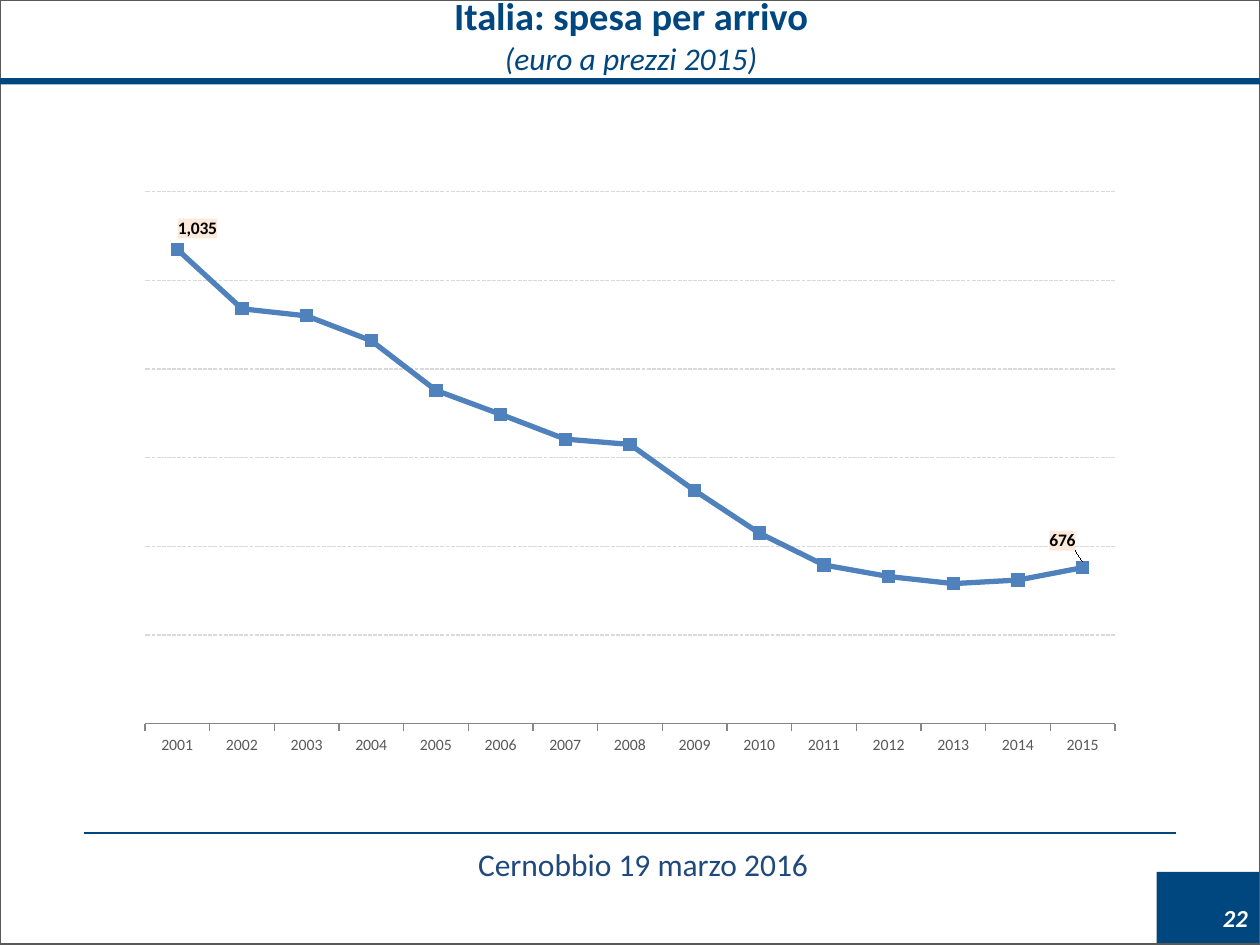
"""Build the slide on Italian spending per arrival, 2001 to 2015."""
from lxml import etree
from pptx import Presentation, util as u
from pptx.chart import data
from pptx.dml.color import RGBColor
from pptx.enum import chart as ch, dml, shapes, text as t
from pptx.oxml import ns, parse_xml

NAVY = RGBColor(0x00, 0x46, 0x7F)
INK = RGBColor(0x1F, 0x49, 0x7D)
BLUE = RGBColor(0x4F, 0x81, 0xBD)
PEACH = RGBColor(0xFD, 0xE9, 0xD9)
GREY = RGBColor(0x59, 0x59, 0x59)
PALE = RGBColor(0xD9, 0xD9, 0xD9)
AXIS = RGBColor(0x86, 0x86, 0x86)
WHITE = RGBColor(0xFF, 0xFF, 0xFF)
BLACK = RGBColor(0, 0, 0)
FONT = "Calibri"

deck = Presentation()
deck.slide_width, deck.slide_height = u.Inches(10), u.Inches(7.5)
slide = deck.slides.add_slide(deck.slide_layouts[6])


def block(x, y, w, h, fill=None, line=None):
    box = slide.shapes.add_shape(shapes.MSO_SHAPE.RECTANGLE, *map(u.Inches, (x, y, w, h)))
    box.shadow.inherit = False
    if fill is None:
        box.fill.background()
    else:
        box.fill.solid()
        box.fill.fore_color.rgb = fill
    if line is None:
        box.line.fill.background()
    else:
        box.line.color.rgb = line
        box.line.width = u.Pt(1)


def write(text, frame, first=True, size=18, color=NAVY, bold=False, italic=False):
    para = frame.paragraphs[0] if first else frame.add_paragraph()
    para.alignment = t.PP_ALIGN.CENTER
    run = para.add_run()
    run.text = text
    font = run.font
    font.name, font.size, font.bold, font.italic = FONT, u.Pt(size), bold, italic
    font.color.rgb = color


block(9.18, 6.92, 0.82, 0.58, fill=NAVY)
block(0, 0, 10, 7.49, line=GREY)
block(0, 0.62, 10, 0.05, fill=NAVY)

rule = slide.shapes.add_connector(
    shapes.MSO_CONNECTOR.STRAIGHT, *map(u.Inches, (0.67, 6.61, 9.33, 6.61)))
rule.line.color.rgb = NAVY
rule.line.width = u.Pt(1.5)
etree.SubElement(rule._element.spPr, ns.qn("a:effectLst"))

frames = []
for spot in ((0.51, -0.11, 9, 0.71), (1.59, 6.66, 7.03, 0.46), (9.33, 7.12, 0.95, 0.39)):
    frame = slide.shapes.add_textbox(*map(u.Inches, spot)).text_frame
    frame.word_wrap = True
    frames.append(frame)
title, foot, page = frames
write("Italia: spesa per arrivo", title, size=22, bold=True)
write("(euro a prezzi 2015)", title, first=False, italic=True)
write("Cernobbio 19 marzo 2016", foot, color=INK)
write("22", page, size=14, color=WHITE, bold=True, italic=True)

spend = data.CategoryChartData(number_format="#,##0")
spend.categories = [str(year) for year in range(2001, 2016)]
spend.add_series("Spesa per arrivo", (
    1035, 968, 960, 932, 876, 849, 821, 815, 763, 715, 679, 666, 658, 662, 676))
chart = slide.shapes.add_chart(
    ch.XL_CHART_TYPE.LINE_MARKERS, *map(u.Inches, (0.99, 1.43, 8.02, 4.64)), spend).chart
chart.has_legend = chart.has_title = False
chart.font.name, chart.font.size = FONT, u.Pt(10)
chart.font.color.rgb = BLACK
plot = chart.plots[0]
plot.vary_by_categories = False

LAYOUT = '<c:layout %s><c:manualLayout>%s</c:manualLayout></c:layout>'
inner = '<c:layoutTarget val="inner"/><c:xMode val="edge"/><c:yMode val="edge"/>'
inner += '<c:x val="0.02"/><c:y val="0.02"/><c:w val="0.96"/><c:h val="0.91"/>'
area = chart._chartSpace.chart.plotArea
for old in area.findall(ns.qn("c:layout")):
    area.remove(old)
area.insert(0, parse_xml(LAYOUT % (ns.nsdecls("c"), inner)))

years = chart.category_axis
years.major_tick_mark = ch.XL_TICK_MARK.OUTSIDE
years.tick_labels.font.size = u.Pt(9)
years.tick_labels.font.color.rgb = GREY
years.format.line.color.rgb = AXIS
years.format.line.width = u.Pt(0.75)

euro = chart.value_axis
euro.visible = False
euro.minimum_scale, euro.maximum_scale, euro.major_unit = 500, 1100, 100
euro.has_major_gridlines = True
grid = euro.major_gridlines.format.line
grid.color.rgb = PALE
grid.width = u.Pt(0.75)
grid.dash_style = dml.MSO_LINE.SQUARE_DOT

curve = plot.series[0]
curve.smooth = False
curve.format.line.color.rgb = BLUE
curve.format.line.width = u.Pt(3)
curve.marker.style = ch.XL_MARKER_STYLE.SQUARE
curve.marker.size = 7
curve.marker.format.fill.solid()
curve.marker.format.fill.fore_color.rgb = BLUE
curve.marker.format.line.color.rgb = BLUE
curve.data_labels.show_value = False

for spot, dx, dy in ((0, 0.02, 0), (14, -0.02, -0.01)):
    label = curve.points[spot].data_label
    label.position = ch.XL_LABEL_POSITION.ABOVE
    label.font.bold = True
    label.font.size = u.Pt(10)
    label.font.color.rgb = BLACK
    node = curve.data_labels._element.find(f'{ns.qn("c:dLbl")}[{1 if spot == 0 else 2}]')
    shift = f'<c:x val="{dx}"/><c:y val="{dy}"/>'
    node.insert(1, parse_xml(LAYOUT % (ns.nsdecls("c"), shift)))
    for old in node.findall(ns.qn("c:spPr")):
        node.remove(old)
    node.insert(2, parse_xml(
        f'<c:spPr {ns.nsdecls("c", "a")}><a:solidFill><a:srgbClr val="{PEACH}"/>'
        '</a:solidFill></c:spPr>'))

deck.save("out.pptx")
